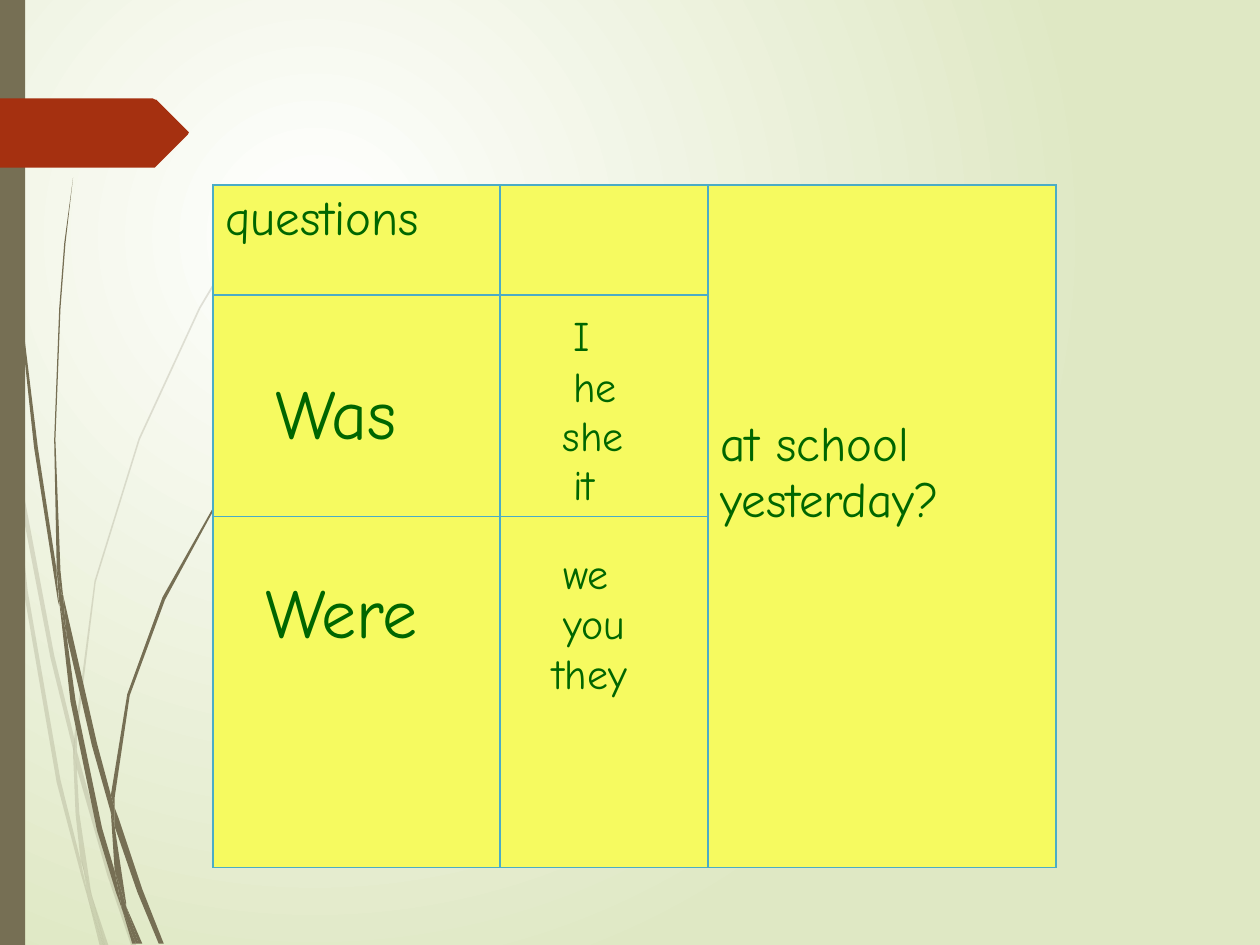
from lxml.etree import SubElement
from pptx import Presentation
from pptx.dml.color import RGBColor
from pptx.enum.shapes import MSO_SHAPE
from pptx.oxml import parse_xml
from pptx.oxml.ns import qn
from pptx.util import Inches, Pt

FONT = "Comic Neue"
COLORS = {"stem": "766F54", "arrow": "A53010", "cell": "F6FA60", "text": "006600",
          "border": "4BACC6", "bg_center": "FFFFFF", "bg_edge": "DFE8C4"}

# Outlines are in hundredths of an inch.
PALE_GRASS = [
    [(8, 350), (6, 322), (0, 282), (0, 299), (7, 344)],
    [(40, 522), (59, 599), (59, 586), (43, 520), (10, 345), (12, 376)],
    [(64, 607), (61, 596), (61, 610), (85, 694), (104, 750), (108, 750), (88, 692)],
    [(83, 750), (86, 750), (73, 711)],
    [(64, 683), (48, 619), (22, 469), (12, 376), (8, 350), (19, 470), (45, 621),
     (64, 693), (70, 714), (69, 707)],
    [(58, 599), (60, 646), (64, 683), (67, 692), (73, 711), (72, 706), (63, 646),
     (61, 610), (61, 608)],
    [(61, 584), (76, 462), (111, 349), (159, 245), (187, 198), (201, 175), (217, 154),
     (217, 153), (201, 175), (186, 197), (158, 244), (110, 348), (75, 461), (59, 584),
     (59, 586), (61, 596)],
    [(70, 714), (79, 750), (82, 750)],
    [(61, 608), (61, 610), (61, 596), (59, 586), (58, 599)],
    [(67, 692), (65, 683), (69, 707), (70, 714), (82, 750), (83, 750), (73, 711)],
]
DARK_GRASS = [
    [(5, 110), (14, 233), (27, 355), (46, 477), (47, 481), (45, 457), (45, 453),
     (30, 355), (15, 232), (6, 109), (4, 48), (3, 0), (2, 0), (3, 48)],
    [(73, 592), (88, 645), (88, 633), (88, 631), (77, 590), (50, 472), (53, 505)],
    [(94, 649), (91, 641), (91, 656), (109, 708), (126, 749), (130, 749), (113, 706)],
    [(91, 691), (81, 657), (60, 556), (53, 505), (47, 477), (56, 557), (77, 659),
     (92, 708), (97, 722), (96, 717)],
    [(50, 472), (48, 453), (44, 349), (48, 245), (52, 193), (58, 141), (51, 193),
     (47, 245), (43, 349), (45, 449), (49, 472)],
    [(110, 749), (113, 749), (100, 719)],
    [(47, 477), (53, 505), (50, 472), (49, 472), (45, 449), (45, 453)],
    [(91, 633), (103, 552), (131, 476), (169, 406), (191, 374), (203, 359), (216, 344),
     (215, 344), (203, 358), (191, 373), (168, 405), (129, 474), (101, 551), (88, 631),
     (91, 641)],
    [(97, 722), (105, 749), (108, 749)],
    [(88, 645), (91, 691), (96, 706), (100, 719), (100, 716), (91, 656), (90, 651)],
    [(88, 645), (90, 651), (91, 656), (91, 641), (88, 631), (88, 633)],
    [(96, 706), (91, 691), (96, 717), (97, 722), (108, 749), (110, 749), (100, 719)],
]
ARROW = [(149, 107), (124, 132), (123, 133), (121, 133), (0, 133), (0, 78), (121, 78),
         (123, 79), (124, 79), (149, 104), (150, 105)]

TABLE_AT = (1.69, 1.47, 6.69, 4.24)
COLS = [2.28, 1.65, 2.76]
ROWS = [0.87, 1.76, 1.61]
CELL_TEXT = {(0, 0): "questions", (0, 2): "at school yesterday?"}
ENDING_DROP = 1.84  # space above the sentence ending in the merged column

# text, left, top, width, height
PRONOUNS = [("I", 4.45, 2.41, 0.38, 0.5), ("he", 4.45, 2.81, 0.58, 0.5),
            ("she", 4.37, 3.2, 0.74, 0.5), ("it", 4.45, 3.59, 0.45, 0.5),
            ("we", 4.37, 4.3, 0.61, 0.5), ("you", 4.37, 4.69, 0.72, 0.5),
            ("they", 4.29, 5.09, 0.91, 0.5)]
VERBS = [("Was", 2.09, 2.88, 1.5, 0.77), ("Were", 2.01, 4.46, 1.65, 0.77)]


def rgb(name):
    return RGBColor.from_string(COLORS[name])


def paint(shape, color, alpha=None):
    """Flat fill, no outline or shadow; alpha is a percentage."""
    shape.shadow.inherit = False
    shape.line.fill.background()
    shape.fill.solid()
    shape.fill.fore_color.rgb = rgb(color)
    if alpha:
        clr = shape.fill._xPr.find(f".//{qn('a:srgbClr')}")
        SubElement(clr, qn("a:alpha"), val=str(alpha * 1000))


def add_outline(shapes, points, color, alpha=None):
    builder = shapes.build_freeform(*points[0], scale=Inches(0.01))
    builder.add_line_segments(points[1:], close=True)
    paint(builder.convert_to_shape(), color, alpha)


def write(tf, text, size):
    r = tf.paragraphs[0].add_run()
    r.text = text
    for key, value in {"name": FONT, "size": Pt(size)}.items():
        setattr(r.font, key, value)
    r.font.color.rgb = rgb("text")


def add_background(s):
    stops = "".join(f'<a:gs pos="{pos}"><a:srgbClr val="{COLORS[name]}"/></a:gs>'
                    for pos, name in ((0, "bg_center"), (100000, "bg_edge")))
    s.element.cSld.insert(0, parse_xml(
        '<p:bg xmlns:p="http://schemas.openxmlformats.org/presentationml/2006/main" '
        'xmlns:a="http://schemas.openxmlformats.org/drawingml/2006/main"><p:bgPr>'
        f'<a:gradFill rotWithShape="1"><a:gsLst>{stops}</a:gsLst><a:path path="circle">'
        '<a:fillToRect l="50000" t="50000" r="100000" b="100000"/></a:path></a:gradFill>'
        '<a:effectLst/></p:bgPr></p:bg>'))


def add_borders(cell):
    tcPr = cell._tc.get_or_add_tcPr()
    for i, side in enumerate(("lnL", "lnR", "lnT", "lnB")):
        ln = tcPr.makeelement(qn(f"a:{side}"), {"w": str(Pt(1))})
        fill = SubElement(ln, qn("a:solidFill"))
        SubElement(fill, qn("a:srgbClr"), val=COLORS["border"])
        tcPr.insert(i, ln)


def add_question_table(s):
    frame = s.shapes.add_table(len(ROWS), len(COLS), *map(Inches, TABLE_AT))
    table = frame.table
    for col, width in zip(table.columns, COLS):
        col.width = Inches(width)
    for row, height in zip(table.rows, ROWS):
        row.height = Inches(height)
    for cell in table.iter_cells():
        cell.fill.solid()
        cell.fill.fore_color.rgb = rgb("cell")
        add_borders(cell)
    ending = table.cell(0, 2)
    ending.merge(table.cell(2, 2))
    ending.margin_top = Inches(ENDING_DROP)
    for at, text in CELL_TEXT.items():
        write(table.cell(*at).text_frame, text, 28)


def main():
    prs = Presentation()
    prs.slide_width, prs.slide_height = Inches(10), Inches(7.5)
    s = prs.slides.add_slide(prs.slide_layouts[6])
    add_background(s)
    for outlines, alpha in ((PALE_GRASS, 20), (DARK_GRASS, None)):
        group = s.shapes.add_group_shape()
        for points in outlines:
            add_outline(group.shapes, points, "stem", alpha)
    bar = s.shapes.add_shape(MSO_SHAPE.RECTANGLE, 0, 0, Inches(0.2), prs.slide_height)
    paint(bar, "stem")
    add_outline(s.shapes, ARROW, "arrow")
    add_question_table(s)
    for words, size, wrap in ((PRONOUNS, 24, False), (VERBS, 40, True)):
        for text, *box in words:
            tf = s.shapes.add_textbox(*map(Inches, box)).text_frame
            tf.word_wrap = wrap
            write(tf, text, size)
    prs.save("out.pptx")


if __name__ == "__main__":
    main()
